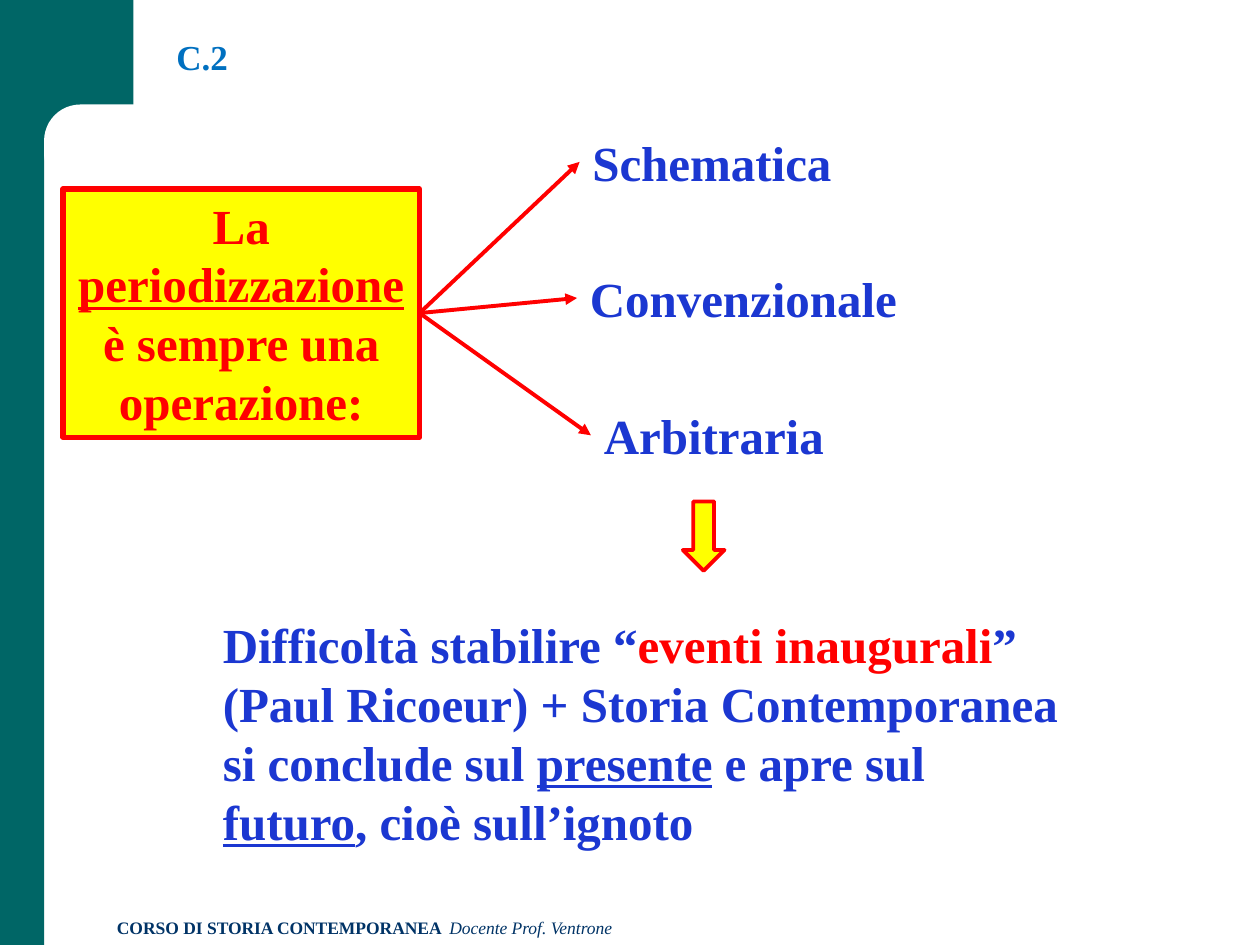
"""Build the slide on why every historical periodisation is an open operation."""
from lxml.etree import SubElement
from pptx import Presentation
from pptx.dml.color import RGBColor
from pptx.enum.shapes import MSO_CONNECTOR, MSO_SHAPE
from pptx.enum.text import MSO_ANCHOR, MSO_AUTO_SIZE, PP_ALIGN
from pptx.oxml.ns import qn
from pptx.util import Inches, Pt

TEAL = RGBColor(0x00, 0x66, 0x66)
WHITE = RGBColor(0xFF, 0xFF, 0xFF)
NAVY = RGBColor(0x00, 0x33, 0x66)
SKY = RGBColor(0x00, 0x70, 0xC0)
BLUE = RGBColor(0x1B, 0x37, 0xD1)
RED = RGBColor(0xFF, 0x00, 0x00)
YELLOW = RGBColor(0xFF, 0xFF, 0x00)
FONT = "Times New Roman"

TITLE = "C.2"
FOOTER = [("CORSO DI STORIA CONTEMPORANEA  ", {"bold": True}),
          ("Docente Prof. Ventrone", {"italic": True})]
PREMISE = [("La ", {}), ("periodizzazione", {"underline": True}),
           (" è sempre una operazione:", {})]
TRAITS = [("Schematica", (4.6, 1, 2.1, 0.57)),
          ("Convenzionale", (4.58, 2.08, 2.64, 0.57)),
          ("Arbitraria", (4.69, 3.17, 1.95, 0.57))]
CONCLUSION = [("Difficoltà stabilire “", {}), ("eventi inaugurali", {"color": RED}),
              ("” (Paul Ricoeur) + Storia Contemporanea si conclude sul ", {}),
              ("presente", {"underline": True}), (" e apre sul ", {}),
              ("futuro", {"underline": True}), (", cioè sull’ignoto", {})]

PREMISE_AREA = (0.5, 1.5, 2.83, 1.97)
BACKDROP = [(MSO_SHAPE.RECTANGLE, (0, 0, 0.35, 7.5), TEAL),
            (MSO_SHAPE.RECTANGLE, (0, 0, 1.06, 1.17), TEAL),
            (MSO_SHAPE.ROUNDED_RECTANGLE, (0.35, 0.83, 6.06, 0.67), WHITE)]


def inches(values):
    return [Inches(value) for value in values]


def add_block(page, kind, area, fill, line=None, width=0):
    block = page.shapes.add_shape(kind, *inches(area))
    block.shadow.inherit = False
    block.fill.solid()
    block.fill.fore_color.rgb = fill
    if line is None:
        block.line.fill.background()
    else:
        block.line.color.rgb = line
        block.line.width = Pt(width)
    return block


def write(shape, spans, size, color, align=PP_ALIGN.LEFT, bold=True, wrap=True,
          anchor=MSO_ANCHOR.TOP):
    frame = shape.text_frame
    frame.word_wrap = wrap
    frame.auto_size = MSO_AUTO_SIZE.NONE
    frame.vertical_anchor = anchor
    para = frame.paragraphs[0]
    para.alignment = align
    para.font.name, para.font.size, para.font.bold = FONT, Pt(size), bold
    para.font.color.rgb = color
    for text, style in spans:
        span = para.add_run()
        span.text = text
        font = span.font
        font.name, font.size = FONT, Pt(size)
        font.bold = style.get("bold", bold)
        font.italic = style.get("italic")
        font.underline = style.get("underline")
        font.color.rgb = style.get("color", color)
    return para


def add_text(page, area, *args, **options):
    box = page.shapes.add_textbox(*inches(area))
    write(box, *args, **options)


def add_arrow(page, start, end):
    arrow = page.shapes.add_connector(MSO_CONNECTOR.STRAIGHT, *inches(start + end))
    arrow.line.color.rgb = RED
    arrow.line.width = Pt(2.25)
    SubElement(arrow.line._get_or_add_ln(), qn("a:tailEnd"), type="triangle")
    SubElement(arrow._element.spPr, qn("a:effectLst"))


def main():
    deck = Presentation()
    deck.slide_width, deck.slide_height = Inches(10), Inches(7.5)
    page = deck.slides.add_slide(deck.slide_layouts[5])

    for kind, area, fill in BACKDROP:
        block = add_block(page, kind, area, fill)
    block.adjustments[0] = 0.43
    add_text(page, (0.83, 7.23, 6.17, 0.27), FOOTER, 10, NAVY, bold=False)

    title = page.shapes.title
    title.left, title.top, title.width, title.height = inches((1.3, 0, 0.92, 0.67))
    heading = write(title, [(TITLE, {})], 20, SKY, anchor=MSO_ANCHOR.BOTTOM)
    heading.line_spacing = 0.9

    premise = add_block(page, MSO_SHAPE.RECTANGLE, PREMISE_AREA, YELLOW, RED, 3)
    write(premise, PREMISE, 28, RED, PP_ALIGN.CENTER)

    left, top, width, height = PREMISE_AREA
    origin = (left + width, top + height / 2)
    for name, area in TRAITS:
        add_text(page, area, [(name, {})], 28, BLUE, PP_ALIGN.CENTER, wrap=False)
        add_arrow(page, origin, (area[0], area[1] + area[3] / 2))

    add_text(page, (1.67, 4.83, 6.83, 2.46), CONCLUSION, 28, BLUE)
    add_block(page, MSO_SHAPE.DOWN_ARROW, (5.42, 3.98, 0.33, 0.55), YELLOW, RED, 2.25)
    deck.save("out.pptx")


if __name__ == "__main__":
    main()
